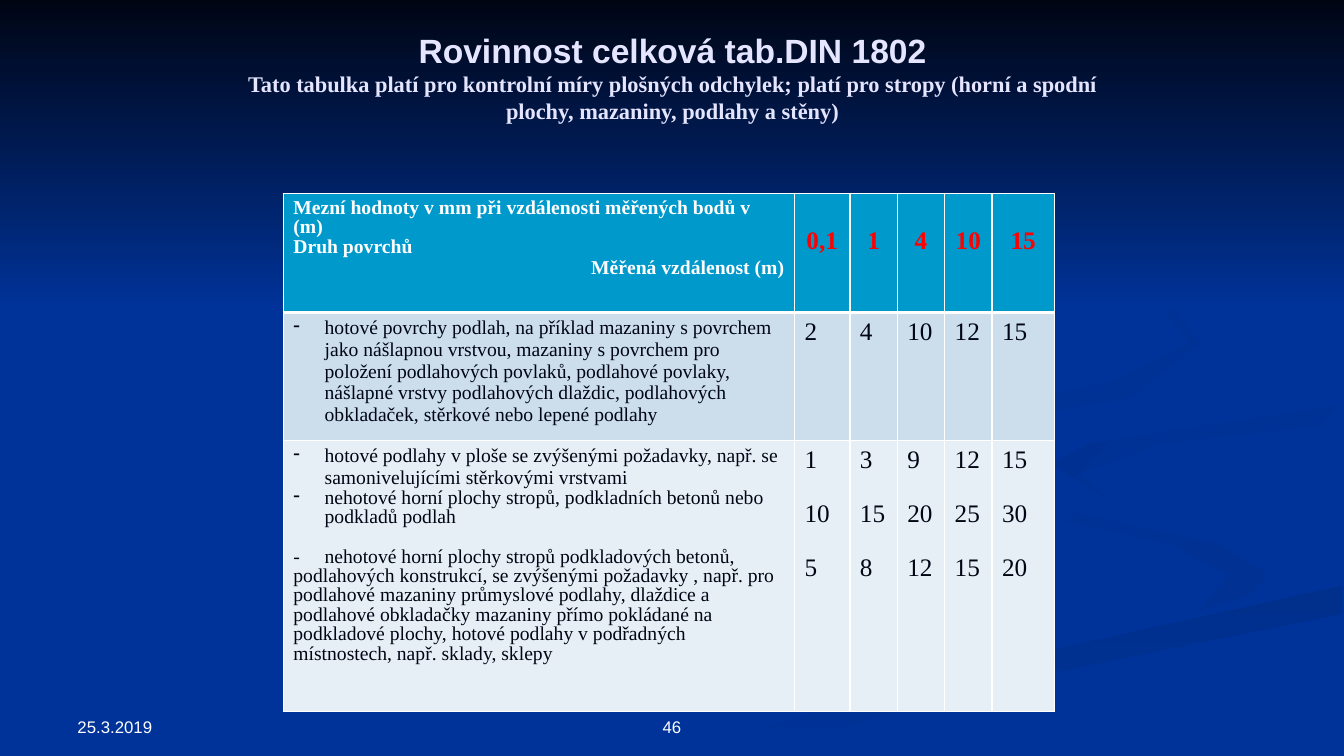
from lxml import etree
from pptx import Presentation
from pptx.dml.color import RGBColor
from pptx.enum.shapes import MSO_SHAPE
from pptx.enum.text import MSO_ANCHOR, MSO_AUTO_SIZE, PP_ALIGN
from pptx.oxml.ns import qn
from pptx.util import Inches, Pt

RECTANGLE = MSO_SHAPE.RECTANGLE
TOP, BOTTOM = MSO_ANCHOR.TOP, MSO_ANCHOR.BOTTOM
LEFT, CENTER, RIGHT = PP_ALIGN.LEFT, PP_ALIGN.CENTER, PP_ALIGN.RIGHT
NO_FIT = MSO_AUTO_SIZE.NONE
SANS, SERIF = "Arial", "Times New Roman"
BLUE, NIGHT, WHITE = "003399", "000514", "FFFFFF"


def rgb(value):
    return RGBColor.from_string(value)


def style(font, name, size, color, bold=False):
    font.name = name
    font.size = Pt(size)
    font.bold = bold
    font.color.rgb = rgb(color)


deck = Presentation()
deck.slide_width, deck.slide_height = Inches(13.33), Inches(7.5)
page = deck.slides.add_slide(deck.slide_layouts[5])
page.background.fill.solid()
page.background.fill.fore_color.rgb = rgb(BLUE)

swirls = [
    (BLUE, "003193", 45, [
        (12.57, 5.7), (12.1, 5.4), (10.3, 5), (9.65, 4.64), (10.2, 5.1),
        (11.6, 5.4), (12.2, 5.7), (11.9, 6.05), (12.4, 5.9)]),
    ("002F8C", BLUE, 90, [
        (6.71, 7.49), (7.6, 7.49), (9.3, 6.9), (13.31, 6.09), (13.31, 5.81),
        (9.3, 6.7)]),
    ("003091", BLUE, 45, [
        (10.42, 4.6), (11, 4.96), (10.7, 4.7), (11.5, 4.4), (13.31, 4.2),
        (13.31, 4.02), (10.8, 4.4)]),
    ("002F8E", BLUE, 45, [
        (9.1, 4.3), (11.2, 3.95), (11.9, 3.4), (11.5, 2.9), (10.17, 2.33),
        (11.4, 2.9), (11.8, 3.4), (11, 3.8), (8.3, 4.3), (7.69, 4.6),
        (8.3, 5), (7.9, 4.7)]),
]
backdrop = []
for start, end, angle, points in swirls:
    corners = [(Inches(x), Inches(y)) for x, y in points]
    builder = page.shapes.build_freeform(*corners[0])
    builder.add_line_segments(corners[1:], close=True)
    backdrop.append((builder.convert_to_shape(), start, end, angle))
band = page.shapes.add_shape(RECTANGLE, 0, 0, deck.slide_width, Inches(3.08))
backdrop.append((band, NIGHT, BLUE, 90))
for shape, start, end, angle in backdrop:
    shape.shadow.inherit = False
    shape.line.fill.background()
    shape.fill.gradient()
    shape.fill.gradient_angle = 360 - angle
    for stop, color in zip(shape.fill.gradient_stops, (start, end)):
        stop.color.rgb = rgb(color)

title = page.shapes.title
title._element.getparent().append(title._element)
title.left, title.top, title.width, title.height = map(Inches, (2.17, 0.3, 9, 1.14))
title.text_frame.text = (
    "Rovinnost celková tab.DIN 1802\v"
    "Tato tabulka platí pro kontrolní míry plošných odchylek; platí pro stropy "
    "(horní a spodní plochy, mazaniny, podlahy a stěny)")
title.text_frame.auto_size = NO_FIT
title.text_frame.word_wrap = True
title.text_frame.vertical_anchor = TOP
title.text_frame.margin_top = 0
heading = title.text_frame.paragraphs[0]
heading.alignment = CENTER
for span, name, size in zip(heading.runs, (SANS, SERIF), (24, 16)):
    style(span.font, name, size, "E5E5FF", True)

for text, left, width, alignment in (("25.3.2019", 0.67, 3.11, LEFT), ("46", 5.08, 3.17, CENTER)):
    box = page.shapes.add_textbox(Inches(left), Inches(6.84), Inches(width), Inches(0.52))
    box.text_frame.text = text
    box.text_frame.word_wrap = True
    box.text_frame.vertical_anchor = BOTTOM
    para = box.text_frame.paragraphs[0]
    para.alignment = alignment
    style(para.runs[0].font, SANS, 12, WHITE)

rows = [
    ["Mezní hodnoty v mm při vzdálenosti měřených bodů v (m)\nDruh povrchů\nMěřená vzdálenost (m)",
     "0,1", "1", "4", "10", "15"],
    ["hotové povrchy podlah, na příklad mazaniny s povrchem jako nášlapnou vrstvou, mazaniny "
     "s povrchem pro položení podlahových povlaků, podlahové povlaky, nášlapné vrstvy "
     "podlahových dlaždic, podlahových obkladaček, stěrkové nebo lepené podlahy",
     "2", "4", "10", "12", "15"],
    ["hotové podlahy v ploše se zvýšenými požadavky, např. se samonivelujícími stěrkovými vrstvami\n"
     "nehotové horní plochy stropů, podkladních betonů nebo podkladů podlah\n"
     "-\tnehotové horní plochy stropů podkladových betonů, podlahových konstrukcí, se zvýšenými "
     "požadavky , např. pro podlahové mazaniny průmyslové podlahy, dlaždice a podlahové "
     "obkladačky mazaniny přímo pokládané na podkladové plochy, hotové podlahy v podřadných "
     "místnostech, např. sklady, sklepy",
     "1\n10\n5", "3\n15\n8", "9\n20\n12", "12\n25\n15", "15\n30\n20"],
]
widths = [5.07, 0.55, 0.47, 0.47, 0.47, 0.62]
heights = [1.18, 1.27, 2.69]
row_fills = ["0099CC", "CCDEEC", "E7EFF6"]
table = page.shapes.add_table(3, 6, Inches(2.81), Inches(1.92), Inches(7.65), Inches(5.14)).table
for column, width in zip(table.columns, widths):
    column.width = Inches(width)
for row, height in zip(table.rows, heights):
    row.height = Inches(height)

for r, texts in enumerate(rows):
    for c, text in enumerate(texts):
        cell = table.cell(r, c)
        cell.text_frame.text = text
        cell.fill.solid()
        cell.fill.fore_color.rgb = rgb(row_fills[r])
        if r == 0 and c:
            cell.margin_top = Inches(0.33)
        properties = cell._tc.get_or_add_tcPr()
        for position, side in enumerate(("lnL", "lnR", "lnT", "lnB")):
            thick = (r, side) in ((0, "lnB"), (1, "lnT"))
            border = etree.Element(qn("a:" + side), w=str(Pt(3 if thick else 1)))
            paint = etree.SubElement(border, qn("a:solidFill"))
            etree.SubElement(paint, qn("a:srgbClr"), val=WHITE)
            properties.insert(position, border)
        for index, para in enumerate(cell.text_frame.paragraphs):
            settings = para._p.get_or_add_pPr()
            if c == 0 and r and index < 2:
                settings.set("marL", str(Inches(0.31)))
                settings.set("indent", str(-Inches(0.31)))
                etree.SubElement(settings, qn("a:buFontTx"))
                etree.SubElement(settings, qn("a:buChar"), char="-")
            elif c == 0 and r:
                stops = etree.SubElement(settings, qn("a:tabLst"))
                etree.SubElement(stops, qn("a:tab"), pos=str(Inches(0.31)), algn="l")
                para.space_before = Pt(14)
            elif c and index:
                para.space_before = Pt(19)
            if c == 0 and (r, index) in ((0, 0), (0, 1), (2, 1), (2, 2)):
                para.line_spacing = 0.9
            if r == 0:
                para.alignment = CENTER if c else RIGHT if index == 2 else LEFT
            color = NIGHT if r else "FF0000" if c else WHITE
            style(para.runs[0].font, SERIF, 18 if c else 14, color, r == 0)

deck.save("out.pptx")
